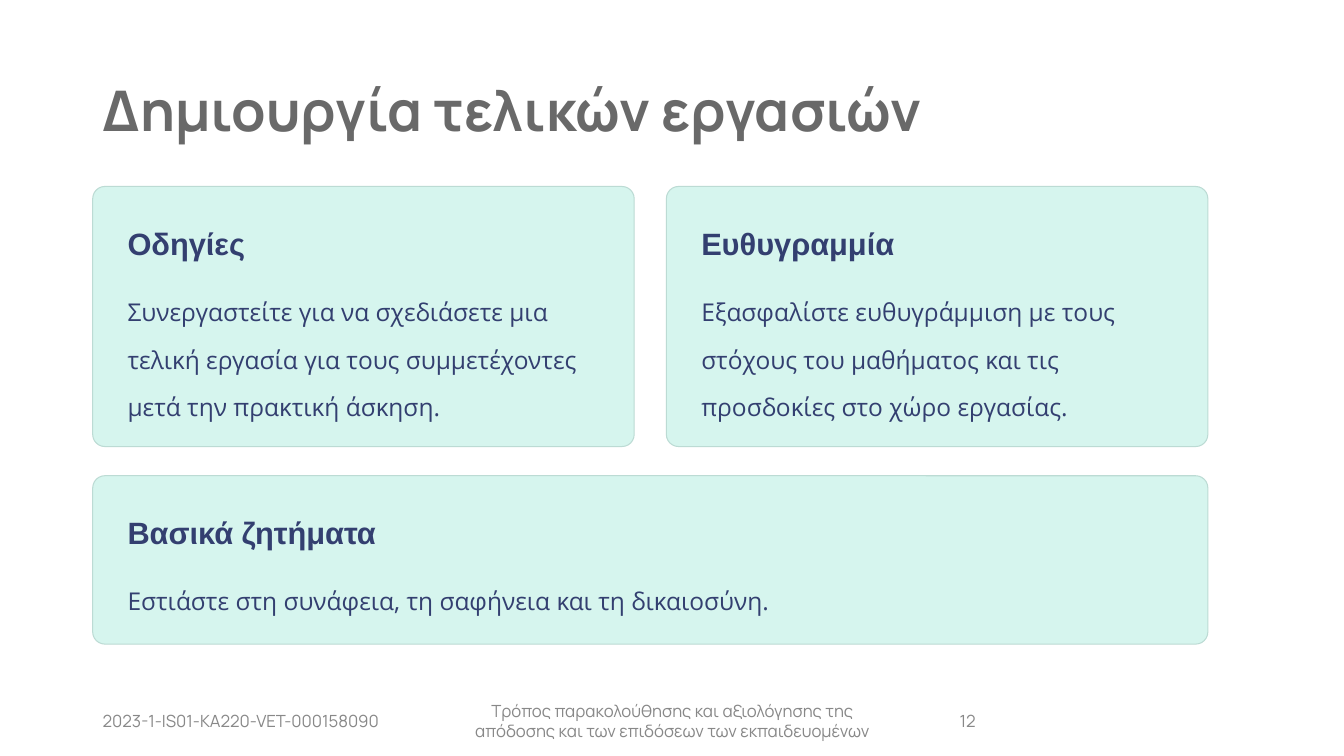
from pptx import Presentation
from pptx.dml.color import RGBColor
from pptx.enum import shapes, text
from pptx.util import Inches, Pt

GREY = RGBColor(0x69, 0x69, 0x69)
FOOTER_GREY = RGBColor(0x88, 0x88, 0x88)
MINT = RGBColor(0xD6, 0xF5, 0xEE)
MINT_EDGE = RGBColor(0xBC, 0xDB, 0xD4)
NAVY = RGBColor(0x33, 0x3F, 0x70)

SLIDE_W, SLIDE_H = 13.33, 7.5
LEFT, TOP = 0.92, 1.85
CARD_W, GAP_X, GAP_Y = 5.37, 0.32, 0.29
TALL, SHORT = 2.58, 1.67
PAD_X, PAD_Y = 0.345, 0.29
HEADING_H, BODY_OFFSET = 0.45, 0.91
RADIUS = 0.12


def write(tf, content, font, size, color, bold=False, spacing=None, align=text.PP_ALIGN.LEFT):
    tf.word_wrap = True
    tf.auto_size = text.MSO_AUTO_SIZE.NONE
    p = tf.paragraphs[0]
    p.alignment = align
    if spacing:
        p.line_spacing = spacing
    r = p.add_run()
    r.text = content
    r.font.name = font
    r.font.size = Pt(size)
    r.font.bold = bold
    r.font.color.rgb = color


def add_title(s, box, content):
    sp = s.shapes.title
    sp.left, sp.top, sp.width, sp.height = map(Inches, box)
    sp.text_frame.vertical_anchor = text.MSO_ANCHOR.MIDDLE
    write(sp.text_frame, content, "Manrope", 40, GREY, True, 0.9)


def add_card(s, box, heading, body):
    x, y, w, h = box
    group = s.shapes.add_group_shape()
    sp = group.shapes.add_shape(shapes.MSO_SHAPE.ROUNDED_RECTANGLE, *map(Inches, box))
    sp.adjustments[0] = RADIUS / h
    sp.shadow.inherit = False
    sp.fill.solid()
    sp.fill.fore_color.rgb = MINT
    sp.line.color.rgb = MINT_EDGE
    sp.line.width = Pt(0.75)
    parts = [
        (heading, PAD_Y, HEADING_H, "Arial", 22, True, 1.25),
        (body, BODY_OFFSET, h - BODY_OFFSET - PAD_Y, "Open Sans", 17.5, False, 1.63),
    ]
    for content, offset, height, font, size, bold, spacing in parts:
        tf = group.shapes.add_textbox(
            Inches(x + PAD_X), Inches(y + offset), Inches(w - 2 * PAD_X), Inches(height)
        ).text_frame
        tf.margin_left = tf.margin_right = tf.margin_top = tf.margin_bottom = 0
        write(tf, content, font, size, NAVY, bold, spacing)


def add_footer(s, box, columns):
    x, y, height, gap = box
    for content, width, align in columns:
        tf = s.shapes.add_textbox(*map(Inches, (x, y, width, height))).text_frame
        tf.vertical_anchor = text.MSO_ANCHOR.MIDDLE
        write(tf, content, "Manrope", 12, FOOTER_GREY, align=align)
        x += width + gap


def main():
    prs = Presentation()
    prs.slide_width, prs.slide_height = Inches(SLIDE_W), Inches(SLIDE_H)
    s = prs.slides.add_slide(prs.slide_layouts[5])
    add_title(s, (LEFT, 0.4, 9.52, 1.45), "Δημιουργία τελικών εργασιών")
    top_cards = [
        ("Οδηγίες", "Συνεργαστείτε για να σχεδιάσετε μια τελική εργασία για τους συμμετέχοντες μετά την πρακτική άσκηση."),
        ("Ευθυγραμμία", "Εξασφαλίστε ευθυγράμμιση με τους στόχους του μαθήματος και τις προσδοκίες στο χώρο εργασίας."),
    ]
    for col, (heading, body) in enumerate(top_cards):
        add_card(s, (LEFT + col * (CARD_W + GAP_X), TOP, CARD_W, TALL), heading, body)
    add_card(
        s,
        (LEFT, TOP + TALL + GAP_Y, 2 * CARD_W + GAP_X, SHORT),
        "Βασικά ζητήματα",
        "Εστιάστε στη συνάφεια, τη σαφήνεια και τη δικαιοσύνη.",
    )
    add_footer(s, (LEFT, 6.95, 0.4, 0.5), [
        ("2023-1-IS01-KA220-VET-000158090", 3, text.PP_ALIGN.LEFT),
        ("Τρόπος παρακολούθησης και αξιολόγησης της απόδοσης και των επιδόσεων των εκπαιδευομένων", 4.5, text.PP_ALIGN.CENTER),
        ("12", 3, text.PP_ALIGN.LEFT),
    ])
    prs.save("out.pptx")


if __name__ == "__main__":
    main()
